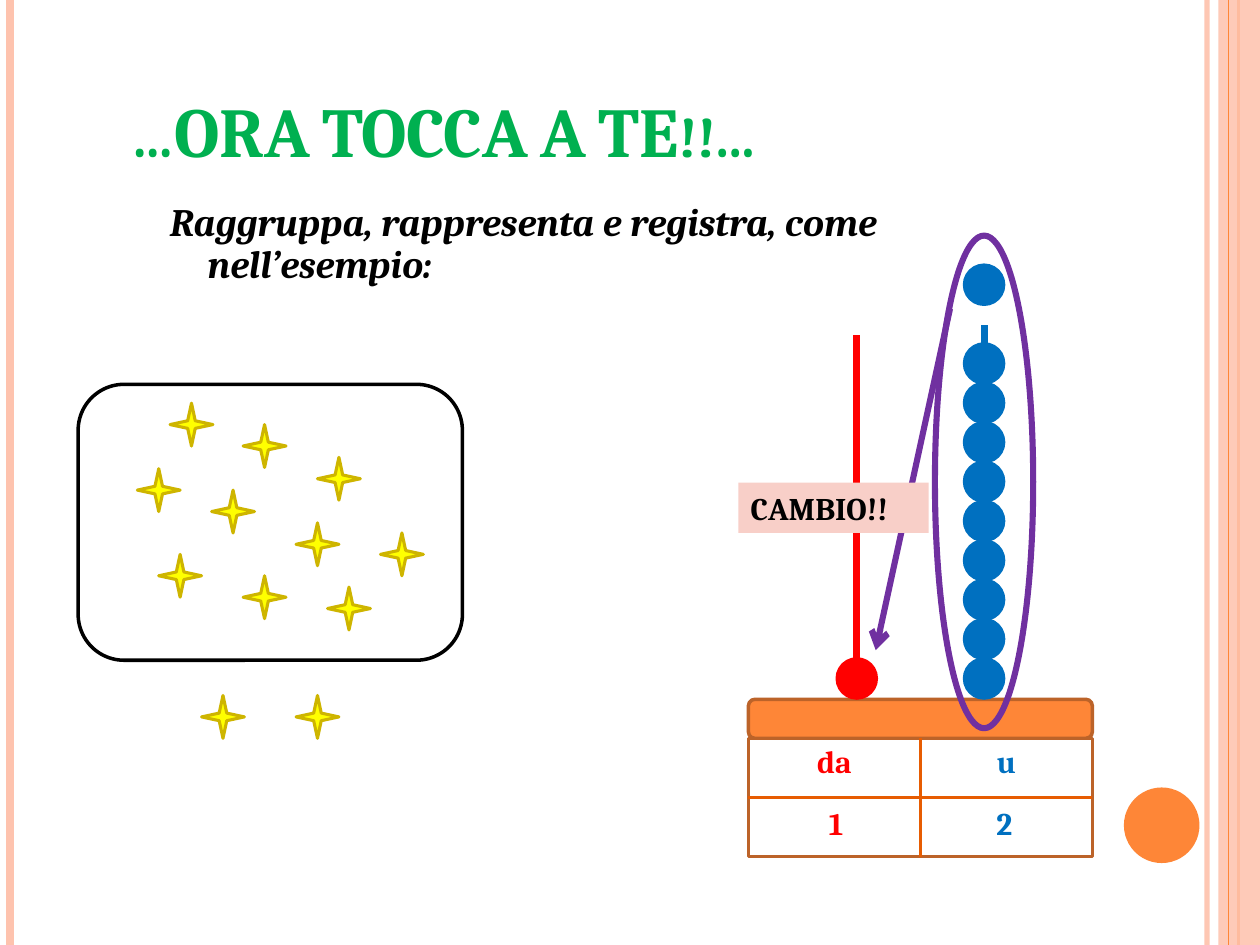
import dataclasses

import lxml.etree
import pptx
import pptx.dml.color
import pptx.enum.shapes
import pptx.enum.text
import pptx.oxml.ns
import pptx.util

Inches = pptx.util.Inches
SHAPE = pptx.enum.shapes.MSO_SHAPE
ALIGN = pptx.enum.text.PP_ALIGN
ANCHOR = pptx.enum.text.MSO_ANCHOR


@dataclasses.dataclass(frozen=True)
class Theme:
    font: str = "Cambria"
    title_size: float = 40
    body_size: float = 22.2
    label_size: float = 18
    title: str = "00B050"
    text: str = "000000"
    white: str = "FFFFFF"
    orange: str = "FE8637"
    peach: str = "FEC3AE"
    frame: str = "BC6329"
    rule: str = "E75C01"
    tens: str = "FF0000"
    units: str = "0070C0"
    change: str = "7030A0"
    change_fill: str = "F8CFC8"
    star_fill: str = "FFFF00"
    star_line: str = "CEB500"


T = Theme()
BEAD = 0.31
BASE_LEFT, BASE_TOP, BASE_WIDTH = 5.94, 5.55, 2.73
TABLE_TOP, TABLE_HEIGHT = 5.86, 0.94
TENS_X, UNITS_X = 6.8, 7.81
STARS = [(1.35, 3.2), (1.09, 3.72), (1.68, 3.89), (2.35, 4.15),
         (1.26, 4.4), (1.93, 4.57), (2.6, 4.66), (3.02, 4.23),
         (1.6, 5.52), (2.35, 5.52), (1.93, 3.37), (2.52, 3.63)]


def rgb(color):
    return pptx.dml.color.RGBColor.from_string(color)


def add_xml(parent, tag, **attrs):
    lxml.etree.SubElement(parent, pptx.oxml.ns.qn(tag), attrs)


def set_alpha(sp, percent):
    color = next(sp._element.spPr.iter(pptx.oxml.ns.qn("a:srgbClr")))
    add_xml(color, "a:alpha", val=str(percent * 1000))


def style_text(p, size, color, italic=False):
    for r in p.runs:
        f = r.font
        f.name, f.size, f.bold, f.italic = T.font, pptx.util.Pt(size), True, italic
        f.color.rgb = rgb(color)


def add_shape(s, kind, left, top, width, height, fill=None, line=None, weight=2):
    sp = s.shapes.add_shape(kind, Inches(left), Inches(top), Inches(width), Inches(height))
    sp.shadow.inherit = False
    if fill:
        sp.fill.solid()
        sp.fill.fore_color.rgb = rgb(fill)
    else:
        sp.fill.background()
    if line:
        sp.line.color.rgb = rgb(line)
        sp.line.width = pptx.util.Pt(weight)
    else:
        sp.line.fill.background()
    return sp


def add_line(s, x1, y1, x2, y2, color, weight, arrow=False):
    cn = s.shapes.add_connector(pptx.enum.shapes.MSO_CONNECTOR.STRAIGHT,
                                Inches(x1), Inches(y1), Inches(x2), Inches(y2))
    cn.line.color.rgb = rgb(color)
    cn.line.width = pptx.util.Pt(weight)
    if arrow:
        add_xml(cn.line._get_or_add_ln(), "a:tailEnd", type="arrow")
    add_xml(cn._element.spPr, "a:effectLst")
    return cn


def add_text(s, text, left, top, width, height, size, color, italic=False):
    sp = s.shapes.add_textbox(Inches(left), Inches(top), Inches(width), Inches(height))
    tf = sp.text_frame
    tf.word_wrap = True
    tf.text = text
    style_text(tf.paragraphs[0], size, color, italic)
    return sp


def add_side_bands(s):
    edge = add_line(s, 9.58, 0, 9.58, 7.5, T.peach, 3)
    set_alpha(edge, 93)
    add_line(s, 0.08, 0, 0.08, 7.5, T.peach, 4.5)
    add_line(s, 9.83, 0, 9.83, 7.5, T.orange, 1.5)
    band = add_shape(s, SHAPE.RECTANGLE, 9.67, 0, 0.33, 7.5, T.peach)
    set_alpha(band, 87)
    add_line(s, 9.75, 0, 9.75, 7.5, T.orange, 0.75)
    add_shape(s, SHAPE.OVAL, 8.92, 6.25, 0.6, 0.6, T.orange)


def add_title(s, text):
    sp = s.shapes.title
    sp.left, sp.top, sp.width, sp.height = (Inches(v) for v in (0.94, 0.16, 8.17, 1.25))
    tf = sp.text_frame
    tf.text = text
    tf.vertical_anchor = ANCHOR.BOTTOM
    p = tf.paragraphs[0]
    p.alignment = ALIGN.LEFT
    style_text(p, T.title_size, T.title)
    p.runs[0]._r.get_or_add_rPr().set("cap", "small")


def add_task(s, text):
    sp = add_text(s, text, 1.25, 1.56, 6.48, 0.78, T.body_size, T.text, italic=True)
    p = sp.text_frame.paragraphs[0]
    p.space_before = pptx.util.Pt(6)
    p.line_spacing = 0.9
    pPr = p._p.get_or_add_pPr()
    pPr.set("marL", str(Inches(0.3)))
    pPr.set("indent", str(Inches(-0.3)))


def add_stars(s):
    for left, top in STARS:
        add_shape(s, SHAPE.STAR_4_POINT, left, top, 0.34, 0.34, T.star_fill, T.star_line, 1.75)
    add_shape(s, SHAPE.ROUNDED_RECTANGLE, 0.62, 3.05, 3.05, 2.19, line=T.text)


def add_place_table(s):
    tbl = s.shapes.add_table(2, 2, Inches(BASE_LEFT), Inches(TABLE_TOP),
                             Inches(BASE_WIDTH), Inches(TABLE_HEIGHT)).table
    for cell in tbl.iter_cells():
        cell.fill.solid()
        cell.fill.fore_color.rgb = rgb(T.white)
    for col, (text, color) in enumerate([("da", T.tens), ("u", T.units)]):
        cell = tbl.cell(0, col)
        cell.text_frame.text = text
        p = cell.text_frame.paragraphs[0]
        p.alignment = ALIGN.CENTER
        style_text(p, T.label_size, color)
    mid_x, mid_y = BASE_LEFT + BASE_WIDTH / 2, TABLE_TOP + TABLE_HEIGHT / 2
    add_shape(s, SHAPE.RECTANGLE, BASE_LEFT, TABLE_TOP, BASE_WIDTH, TABLE_HEIGHT, line=T.frame)
    add_line(s, mid_x, TABLE_TOP, mid_x, TABLE_TOP + TABLE_HEIGHT, T.rule, 2)
    add_line(s, BASE_LEFT, mid_y, BASE_LEFT + BASE_WIDTH, mid_y, T.rule, 2)
    add_text(s, "2", 7.81, mid_y, 0.7, 0.4, T.label_size, T.units)
    add_text(s, "1", 6.48, mid_y, 0.63, 0.4, T.label_size, T.tens)


def add_bead(s, x, top, color):
    add_shape(s, SHAPE.OVAL, x - BEAD / 2, top, BEAD, BEAD, color, color)


def add_abacus(s):
    add_line(s, TENS_X, 2.66, TENS_X, BASE_TOP, T.tens, 4)
    add_line(s, UNITS_X, 2.58, UNITS_X, BASE_TOP, T.units, 4)
    add_shape(s, SHAPE.ROUNDED_RECTANGLE, BASE_LEFT, BASE_TOP, BASE_WIDTH, 0.31,
              T.orange, T.frame)
    add_place_table(s)
    for i in [*range(9), 10]:
        add_bead(s, UNITS_X, 5.23 - i * 5 / 16, T.units)


def add_change(s):
    """Ring the ten units and send them to the tens rod as one bead."""
    add_line(s, 7.54, 2.45, 6.95, 5.16, T.change, 3.5, arrow=True)
    add_shape(s, SHAPE.OVAL, 7.42, 1.87, 0.78, 3.91, line=T.change, weight=3.5)
    add_bead(s, TENS_X, 5.23, T.tens)
    sp = add_text(s, "CAMBIO!!", 5.86, 3.83, 1.51, 0.4, T.label_size, T.text)
    sp.fill.solid()
    sp.fill.fore_color.rgb = rgb(T.change_fill)


def main():
    prs = pptx.Presentation()
    prs.slide_width, prs.slide_height = Inches(10), Inches(7.5)
    s = prs.slides.add_slide(prs.slide_layouts[5])
    add_side_bands(s)
    add_title(s, "…ORA TOCCA A TE!!...")
    add_task(s, "Raggruppa, rappresenta e registra, come nell’esempio:")
    add_stars(s)
    add_abacus(s)
    add_change(s)
    prs.save("out.pptx")


if __name__ == "__main__":
    main()
